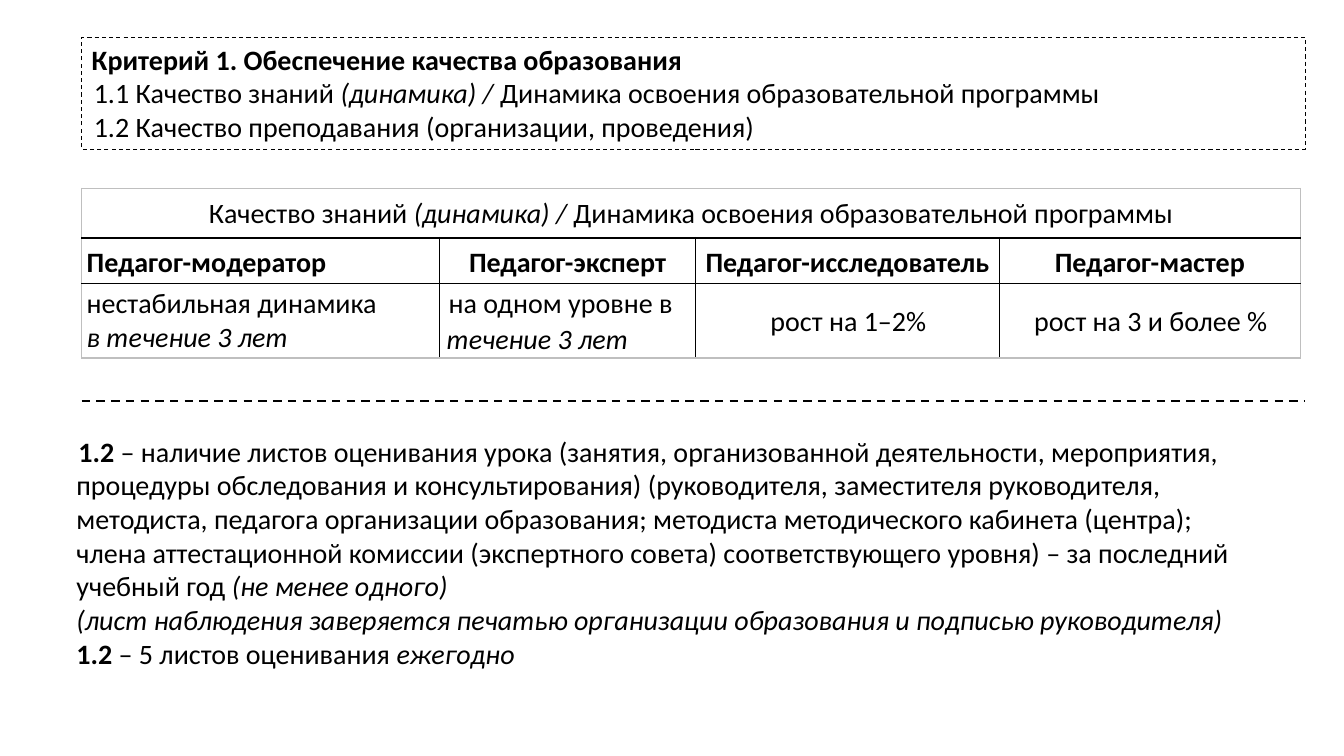
"""Builds the slide on criterion 1, the quality of education."""
from lxml.etree import SubElement
from pptx import Presentation
from pptx.dml.color import RGBColor
from pptx.enum.dml import MSO_LINE_DASH_STYLE as Dash
from pptx.enum.shapes import MSO_CONNECTOR as Connector
from pptx.enum.text import MSO_VERTICAL_ANCHOR as Anchor, PP_PARAGRAPH_ALIGNMENT as Align
from pptx.oxml.ns import qn
from pptx.util import Inches, Pt

BLACK = RGBColor(0, 0, 0)
GREY = RGBColor(0xBF, 0xBF, 0xBF)
FONT = "Calibri"
INDENT = Inches(0.02)
LEFT = 0.81

TOPIC = [("Качество знаний ", ""), ("(динамика) / ", "i"),
         ("Динамика освоения образовательной программы", "")]
CRITERION = [
    [("Критерий 1. Обеспечение качества образования", "b")],
    [("1.1 ", "")] + TOPIC,
    [("1.2 Качество преподавания (организации, проведения)", "")],
]
CATEGORIES = ["Педагог-модератор", "Педагог-эксперт", "Педагог-исследователь", "Педагог-мастер"]
DYNAMICS = [
    [[("нестабильная динамика", "")], [("в течение 3 лет", "i")]],
    [[("на одном уровне в ", ""), ("течение 3 лет", "i")]],
    [[("рост на 1–2%", "")]],
    [[("рост на 3 и более %", "")]],
]
COLUMN_WIDTHS = [3.55, 2.54, 3.01, 2.99]
ROW_HEIGHTS = [0.49, 0.45, 0.74]
REQUIREMENTS = [
    [("1.2", "b"),
     (" – наличие листов оценивания урока (занятия, организованной деятельности, мероприятия, "
      "процедуры обследования и консультирования) (руководителя, заместителя руководителя, "
      "методиста, педагога организации образования; методиста методического кабинета (центра); "
      "члена аттестационной комиссии (экспертного совета) соответствующего уровня) – за последний "
      "учебный год ", ""),
     ("(не менее одного)", "i")],
    [("(лист наблюдения заверяется печатью организации образования и подписью руководителя)", "i")],
    [("1.2", "b"), (" – 5 листов оценивания ", ""), ("ежегодно", "i")],
]


def write_text(frame, paragraphs, align=Align.LEFT, spacing=1.0, indented=()):
    """Fills a text frame with paragraphs of (text, style) runs."""
    frame.word_wrap = True
    for index, runs in enumerate(paragraphs):
        paragraph = frame.add_paragraph() if index else frame.paragraphs[0]
        paragraph.alignment = align
        paragraph.line_spacing = spacing
        paragraph.font.name = FONT
        paragraph.font.size = Pt(20)
        paragraph.font.color.rgb = BLACK
        if index in indented:
            paragraph._p.get_or_add_pPr().set("indent", str(INDENT))
        for text, style in runs:
            run = paragraph.add_run()
            run.text = text
            run.font.bold = style == "b"
            run.font.italic = style == "i"


def dash_line(line, width):
    """Makes an outline black and dashed."""
    line.color.rgb = BLACK
    line.width = Pt(width)
    line.dash_style = Dash.DASH


def add_criterion(slide):
    """Places the framed criterion in the title placeholder."""
    title = slide.shapes.title
    title.left, title.top = Inches(LEFT), Inches(0.37)
    title.width, title.height = Inches(12.14), Inches(1.11)
    title.text_frame.vertical_anchor = Anchor.TOP
    dash_line(title.line, 0.75)
    write_text(title.text_frame, CRITERION, indented=(1, 2))


def set_borders(cell, row, first, last):
    """Draws grey outer and black inner cell borders."""
    properties = cell._tc.get_or_add_tcPr()
    outer = {"L": first, "R": last, "T": row == 0, "B": row == len(ROW_HEIGHTS) - 1}
    for side, is_outer in outer.items():
        under_heading = (row, side) in ((0, "B"), (1, "T"))
        width = Pt(1.5 if under_heading else 1)
        border = SubElement(properties, qn(f"a:ln{side}"), w=str(width))
        fill = SubElement(border, qn("a:solidFill"))
        SubElement(fill, qn("a:srgbClr"), val=str(GREY if is_outer else BLACK))


def format_cell(cell, row, column):
    """Sets the margins, anchor, borders and fill of a cell."""
    narrow = row < 2 or column == 0
    cell.margin_left = cell.margin_right = Inches(0.05 if narrow else 0.07)
    cell.margin_top = cell.margin_bottom = Inches(0.03 if narrow else 0)
    cell.vertical_anchor = Anchor.TOP if narrow else Anchor.MIDDLE
    set_borders(cell, row, column == 0, row == 0 or column == len(CATEGORIES) - 1)
    cell.fill.background()


def add_dynamics_table(slide):
    """Adds the table of required dynamics by teacher category."""
    frame = slide.shapes.add_table(
        len(ROW_HEIGHTS), len(CATEGORIES), Inches(LEFT), Inches(1.87),
        Inches(sum(COLUMN_WIDTHS)), Inches(sum(ROW_HEIGHTS)))
    table = frame.table
    table.first_row = table.horz_banding = False
    for column, width in zip(table.columns, COLUMN_WIDTHS):
        column.width = Inches(width)
    for row, height in zip(table.rows, ROW_HEIGHTS):
        row.height = Inches(height)
    for row in range(len(ROW_HEIGHTS)):
        for column in range(len(CATEGORIES)):
            format_cell(table.cell(row, column), row, column)
    heading = table.cell(0, 0)
    heading.merge(table.cell(0, len(CATEGORIES) - 1))
    write_text(heading.text_frame, [TOPIC], Align.CENTER, 1.15)
    for column, (category, dynamics) in enumerate(zip(CATEGORIES, DYNAMICS)):
        write_text(table.cell(1, column).text_frame, [[(category, "b")]],
                   Align.CENTER if column else Align.LEFT, 1.15)
        write_text(table.cell(2, column).text_frame, dynamics,
                   Align.CENTER if column > 1 else Align.LEFT,
                   1.07 if column else 1.0, indented=(0,) if column else ())


def add_separator(slide):
    """Adds the dashed line below the table."""
    line = slide.shapes.add_connector(
        Connector.STRAIGHT, Inches(LEFT), Inches(3.98), Inches(12.94), Inches(3.98))
    dash_line(line.line, 1.5)
    SubElement(line._element.spPr, qn("a:effectLst"))


def add_requirements(slide):
    """Adds the text on lesson assessment sheets."""
    box = slide.shapes.add_textbox(Inches(0.66), Inches(4.26), Inches(12), Inches(2.46))
    write_text(box.text_frame, REQUIREMENTS, indented=(0,))


def main():
    """Builds and saves the presentation."""
    presentation = Presentation()
    presentation.slide_width, presentation.slide_height = Inches(13.33), Inches(7.5)
    slide = presentation.slides.add_slide(presentation.slide_layouts.get_by_name("Title Only"))
    add_criterion(slide)
    add_dynamics_table(slide)
    add_requirements(slide)
    add_separator(slide)
    presentation.save("out.pptx")


if __name__ == "__main__":
    main()
